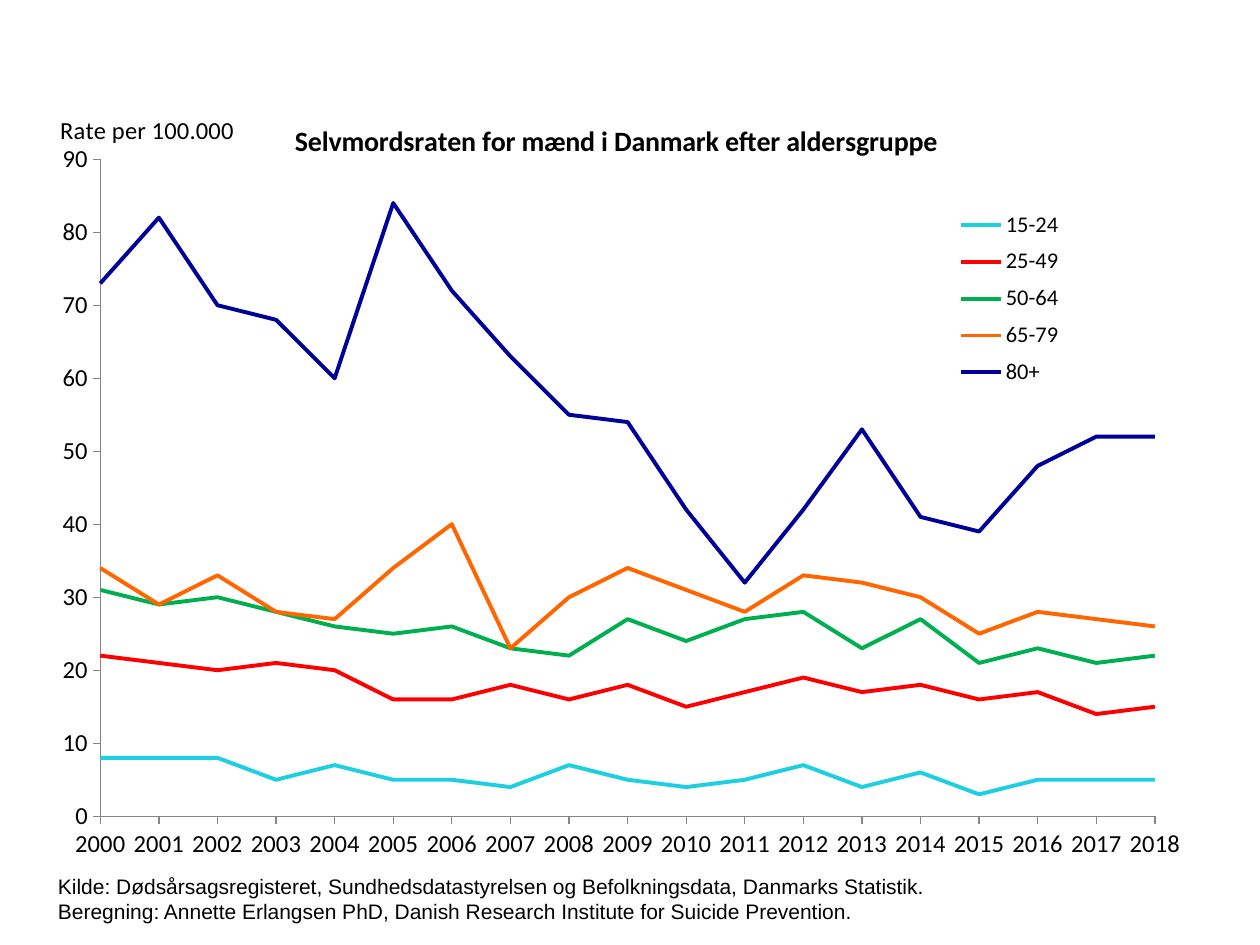
from lxml.etree import SubElement
from pptx import Presentation
from pptx.chart.data import CategoryChartData
from pptx.dml.color import RGBColor
from pptx.enum.chart import XL_CHART_TYPE, XL_LEGEND_POSITION, XL_TICK_MARK
from pptx.oxml.ns import qn
from pptx.util import Inches, Pt

COLORS = {
    "text": "000000", "axis": "868686",
    "15-24": "1ECFE2", "25-49": "FF0000", "50-64": "00B050",
    "65-79": "FF6600", "80+": "000099",
}
YEARS = [str(year) for year in range(2000, 2019)]
RATES = {
    "15-24": (8, 8, 8, 5, 7, 5, 5, 4, 7, 5, 4, 5, 7, 4, 6, 3, 5, 5, 5),
    "25-49": (22, 21, 20, 21, 20, 16, 16, 18, 16, 18, 15, 17, 19, 17, 18, 16, 17, 14, 15),
    "50-64": (31, 29, 30, 28, 26, 25, 26, 23, 22, 27, 24, 27, 28, 23, 27, 21, 23, 21, 22),
    "65-79": (34, 29, 33, 28, 27, 34, 40, 23, 30, 34, 31, 28, 33, 32, 30, 25, 28, 27, 26),
    "80+": (73, 82, 70, 68, 60, 84, 72, 63, 55, 54, 42, 32, 42, 53, 41, 39, 48, 52, 52),
}
SOURCE_LINES = (
    "Kilde: Dødsårsagsregisteret, Sundhedsdatastyrelsen og Befolkningsdata, Danmarks Statistik.",
    "Beregning: Annette Erlangsen PhD, Danish Research Institute for Suicide Prevention.",
)


class RateSlide:
    """Holds the style and the slide, and adds the chart and its source note."""

    def __init__(self, slide):
        self.slide = slide

    def color(self, name):
        return RGBColor.from_string(COLORS[name])

    def style(self, font, size, face="Calibri", bold=False):
        font.name, font.size, font.bold = face, Pt(size), bold
        font.color.rgb = self.color("text")

    def add_text(self, paragraph, text, size, face="Calibri", bold=False):
        run = paragraph.add_run()
        run.text = text
        self.style(run.font, size, face, bold)

    def place(self, part, **position):
        for old_layout in part.findall(qn("c:layout")):
            part.remove(old_layout)
        layout = SubElement(part, qn("c:layout"))
        manual = SubElement(layout, qn("c:manualLayout"))
        if part.tag == qn("c:plotArea"):
            SubElement(manual, qn("c:layoutTarget")).set("val", "inner")
        for side in ("x", "y"):
            SubElement(manual, qn(f"c:{side}Mode")).set("val", "edge")
        for key, value in position.items():
            SubElement(manual, qn(f"c:{key}")).set("val", str(value))
        overlay = part.find(qn("c:overlay"))
        if overlay is None:
            part.insert(0, layout)
        else:
            overlay.set("val", "1")
            overlay.addprevious(layout)

    def axis(self, axis):
        axis.has_major_gridlines = False
        axis.major_tick_mark = XL_TICK_MARK.OUTSIDE
        axis.minor_tick_mark = XL_TICK_MARK.NONE
        axis.format.line.color.rgb = self.color("axis")
        axis.format.line.width = Pt(0.75)
        self.style(axis.tick_labels.font, 14)

    def line_chart(self, title, axis_title, left, top, width, height):
        data = CategoryChartData(number_format="0")
        data.categories = YEARS
        for age_group, rates in RATES.items():
            data.add_series(age_group, rates)
        chart = self.slide.shapes.add_chart(
            XL_CHART_TYPE.LINE, Inches(left), Inches(top), Inches(width), Inches(height), data
        ).chart
        self.style(chart.font, 14)
        chart.plots[0].vary_by_categories = False
        for series in chart.plots[0].series:
            series.smooth = False
            series.format.line.color.rgb = self.color(series.name)
            series.format.line.width = Pt(2.25)

        self.axis(chart.category_axis)
        rate_axis = chart.value_axis
        self.axis(rate_axis)
        rate_axis.minimum_scale, rate_axis.maximum_scale, rate_axis.major_unit = 0, 90, 10
        rate_axis.tick_labels.number_format = "0"
        rate_axis.tick_labels.number_format_is_linked = False

        chart.has_title = True
        self.add_text(chart.chart_title.text_frame.paragraphs[0], title, 16, bold=True)
        self.add_text(rate_axis.axis_title.text_frame.paragraphs[0], axis_title, 14)
        chart.has_legend = True
        chart.legend.position = XL_LEGEND_POSITION.RIGHT
        chart.legend.include_in_layout = False
        self.style(chart.legend.font, 12.8)

        plot_area = chart.element.find(".//" + qn("c:plotArea"))
        value_axis = plot_area.find(qn("c:valAx"))
        for crossing in value_axis.findall(qn("c:crossBetween")):
            value_axis.remove(crossing)
        crossing = SubElement(value_axis, qn("c:crossBetween"))
        crossing.set("val", "midCat")
        value_axis.find(qn("c:crosses")).addnext(crossing)
        rate_title = value_axis.find(qn("c:title"))
        body = rate_title.find(".//" + qn("a:bodyPr"))
        body.set("rot", "0")
        body.set("vert", "horz")
        chart_body = plot_area.getparent()
        self.place(plot_area, x=0.048, y=0.095, w=0.901, h=0.848)
        self.place(rate_title, x=0.01, y=0.03)
        self.place(chart_body.find(qn("c:title")), x=0.21, y=0.04)
        self.place(chart_body.find(qn("c:legend")), x=0.77, y=0.15, w=0.11, h=0.25)

    def note(self, lines, left, top, width, height):
        frame = self.slide.shapes.add_textbox(
            Inches(left), Inches(top), Inches(width), Inches(height)
        ).text_frame
        frame.word_wrap = True
        frame.margin_left = frame.margin_top = Inches(0.03)
        frame.margin_right = frame.margin_bottom = 0
        for index, line in enumerate(lines):
            paragraph = frame.add_paragraph() if index else frame.paragraphs[0]
            self.add_text(paragraph, line, 12, "Arial")


def main():
    presentation = Presentation()
    presentation.slide_width, presentation.slide_height = Inches(10), Inches(7.5)
    page = RateSlide(presentation.slides.add_slide(presentation.slide_layouts[6]))
    page.note(SOURCE_LINES, 0.43, 6.9, 8.68, 0.43)
    page.line_chart(
        "Selvmordsraten for mænd i Danmark efter aldersgruppe",
        "Rate per 100.000", 0.35, 0.68, 9.29, 6.15,
    )
    presentation.save("out.pptx")


if __name__ == "__main__":
    main()
